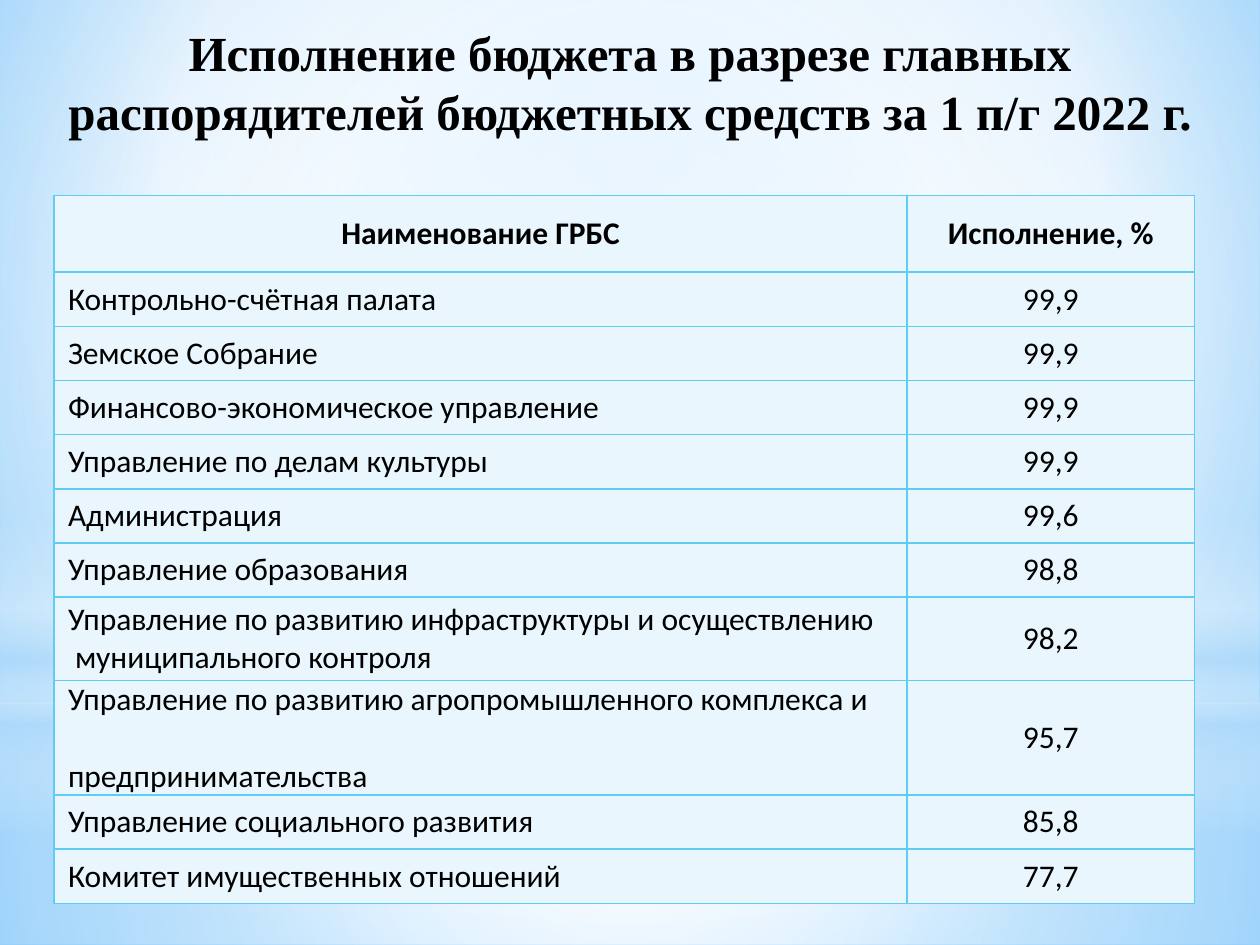
from lxml import etree
from pptx import Presentation
from pptx import util as u
from pptx.dml.color import RGBColor
from pptx.enum import shapes, text
from pptx.oxml.ns import qn

BLACK = RGBColor(0x00, 0x00, 0x00)
WHITE = RGBColor(0xFF, 0xFF, 0xFF)
PALE = RGBColor(0xEA, 0xF6, 0xFD)
BORDER = RGBColor(0x5E, 0xCC, 0xF3)
HAZE = RGBColor(0xB4, 0xDC, 0xFA)
SKY = RGBColor(0x9E, 0xD5, 0xFF)
BLUE = RGBColor(0x5B, 0xB9, 0xFF)

CENTER = (50, 50, 50, 50)
HEADER = ("Наименование ГРБС", "Исполнение, %")
ROWS = [
    ("Контрольно-счётная палата", "99,9"),
    ("Земское Собрание", "99,9"),
    ("Финансово-экономическое управление", "99,9"),
    ("Управление по делам культуры", "99,9"),
    ("Администрация", "99,6"),
    ("Управление образования", "98,8"),
    ("Управление по развитию инфраструктуры и осуществлению\v муниципального контроля", "98,2"),
    ("Управление по развитию агропромышленного комплекса и\nпредпринимательства", "95,7"),
    ("Управление социального развития", "85,8"),
    ("Комитет имущественных отношений", "77,7"),
]
COLUMN_WIDTHS = (6.77, 2.28)
ROW_HEIGHTS = [0.61] + [0.43] * 6 + [0.66, 0.91] + [0.43] * 2


def sub(parent, tag, **attrs):
    return etree.SubElement(parent, qn(tag), {k: str(v) for k, v in attrs.items()})


def add_color(parent, color, alpha=100):
    clr = sub(parent, "a:srgbClr", val=color)
    if alpha < 100:
        sub(clr, "a:alpha", val=alpha * 1000)


def set_gradient(fill, props, stops, to=None, angle=0):
    """Fill with (position, colour, opacity) stops: circular around `to`, else linear."""
    fill.solid()
    solid = props.find(qn("a:solidFill"))
    grad = etree.Element(qn("a:gradFill"), rotWithShape="1")
    gs_list = sub(grad, "a:gsLst")
    for pos, color, alpha in stops:
        add_color(sub(gs_list, "a:gs", pos=pos * 1000), color, alpha)
    if to:
        rect = dict(zip("ltrb", (v * 1000 for v in to)))
        sub(sub(grad, "a:path", path="circle"), "a:fillToRect", **rect)
    else:
        sub(grad, "a:lin", ang=angle * 60000, scaled=0)
    props.replace(solid, grad)


class SlideBuilder:
    title_font, body_font = "Times New Roman", "Calibri"
    title_size, body_size = u.Pt(28), u.Pt(18)

    def __init__(self, slide):
        self.s = slide

    def background(self, stops, to):
        fill = self.s.background.fill
        fill.solid()
        set_gradient(fill, self.s.element.cSld.bg.bgPr, stops, to)

    def glow(self, kind, top, height, stops, to=None, angle=0):
        """Add a full-width translucent shape."""
        sp = self.s.shapes.add_shape(kind, 0, u.Inches(top), u.Inches(10), u.Inches(height))
        sp.shadow.inherit = False
        sp.line.fill.background()
        set_gradient(sp.fill, sp.element.spPr, stops, to, angle)

    def style(self, tf, font, size, bold, align):
        for p in tf.paragraphs:
            p.alignment = align
            for r in p.runs:
                r.font.name, r.font.size, r.font.bold = font, size, bold
                r.font.color.rgb = BLACK

    def title(self, words, left, top, width, height):
        sp = self.s.shapes.add_textbox(*map(u.Inches, (left, top, width, height)))
        tf = sp.text_frame
        tf.word_wrap = True
        tf.vertical_anchor = text.MSO_ANCHOR.TOP
        tf.text = words
        self.style(tf, self.title_font, self.title_size, True, text.PP_ALIGN.CENTER)

    def cell(self, cell, words, bold, align):
        cell.text = words
        cell.vertical_anchor = text.MSO_ANCHOR.MIDDLE
        cell.margin_left = cell.margin_right = u.Inches(0.11) if align == text.PP_ALIGN.LEFT else 0
        cell.margin_top = cell.margin_bottom = 0
        self.style(cell.text_frame, self.body_font, self.body_size, bold, align)
        for p in cell.text_frame.paragraphs[1:]:
            p.space_before = u.Pt(22)
        props = cell._tc.get_or_add_tcPr()
        for side in ("a:lnL", "a:lnR", "a:lnT", "a:lnB"):
            add_color(sub(sub(props, side, w=u.Pt(1)), "a:solidFill"), BORDER)
        cell.fill.solid()
        cell.fill.fore_color.rgb = PALE

    def table(self, rows, left, top, widths, heights):
        frame = self.s.shapes.add_table(
            len(rows), len(widths), u.Inches(left), u.Inches(top),
            u.Inches(sum(widths)), u.Inches(sum(heights)))
        table = frame.table
        for column, width in zip(table.columns, widths):
            column.width = u.Inches(width)
        for i, (row, height) in enumerate(zip(rows, heights)):
            table.rows[i].height = u.Inches(height)
            for j, words in enumerate(row):
                left_aligned = i > 0 and j == 0
                align = text.PP_ALIGN.LEFT if left_aligned else text.PP_ALIGN.CENTER
                self.cell(table.cell(i, j), words, i == 0, align)


def main():
    prs = Presentation()
    prs.slide_width, prs.slide_height = u.Inches(10), u.Inches(7.5)
    b = SlideBuilder(prs.slides.add_slide(prs.slide_layouts[6]))
    rect, oval = shapes.MSO_SHAPE.RECTANGLE, shapes.MSO_SHAPE.OVAL

    b.background([(0, SKY, 100), (60, WHITE, 100), (100, BLUE, 100)], (20, 10, 20, 60))
    b.glow(rect, 5.58, 1.92, [(0, WHITE, 91), (37, WHITE, 76), (100, HAZE, 79)], CENTER)
    b.glow(rect, 0, 5.58, [(0, WHITE, 89), (48, WHITE, 62), (100, HAZE, 79)], CENTER)
    b.glow(rect, 4.12, 2.5, [(0, WHITE, 0), (29, WHITE, 30), (45, HAZE, 40),
                             (55, WHITE, 26), (65, HAZE, 60), (100, WHITE, 0)], angle=90)
    b.glow(oval, 1.75, 5.58, [(0, WHITE, 100), (56, WHITE, 0)], CENTER)

    b.title("Исполнение бюджета в разрезе главных распорядителей "
            "бюджетных средств за 1 п/г 2022 г.", 0.12, 0.13, 9.76, 1.25)
    b.table([HEADER] + ROWS, 0.43, 1.55, COLUMN_WIDTHS, ROW_HEIGHTS)
    prs.save("out.pptx")


if __name__ == "__main__":
    main()
